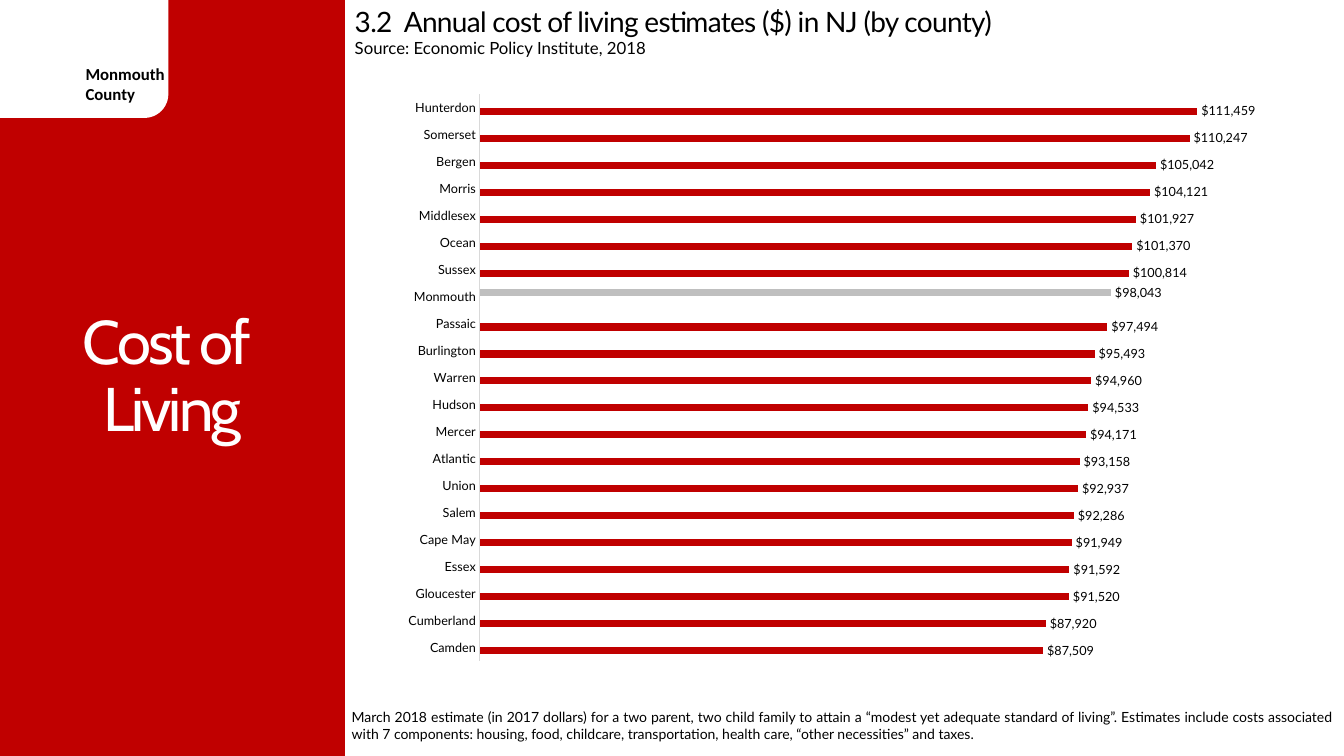
from dataclasses import dataclass

from lxml import etree
from pptx import Presentation
from pptx import util as u
from pptx.chart import data as chart_data
from pptx.dml import color
from pptx.enum import chart as charts, shapes, text


@dataclass(frozen=True)
class Theme:
    """Hold the colours, fonts and type sizes of the slide."""
    red: str = "C00000"
    grey: str = "BFBFBF"
    axis: str = "D9D9D9"
    white: str = "FFFFFF"
    black: str = "000000"
    body_font: str = "Lato"
    title_font: str = "Cabin"
    badge_font: str = "Calibri"
    title: float = 44
    heading: float = 20
    label: float = 12
    note: float = 10
    chart: float = 9


THEME = Theme()
RED_FORMAT = '"$"#,##0_);[Red]\\("$"#,##0\\)'
GREY_FORMAT = '"$"#,##0'
HIGHLIGHT = "Monmouth"
COSTS = {
    "Camden": 87509, "Cumberland": 87920, "Gloucester": 91520, "Essex": 91592,
    "Cape May": 91949, "Salem": 92286, "Union": 92937, "Atlantic": 93158,
    "Mercer": 94171, "Hudson": 94533, "Warren": 94960, "Burlington": 95493,
    "Passaic": 97494, "Monmouth": 98043, "Sussex": 100814, "Ocean": 101370,
    "Middlesex": 101927, "Morris": 104121, "Bergen": 105042,
    "Somerset": 110247, "Hunterdon": 111459,
}
NOTE = (
    "March 2018 estimate (in 2017 dollars) for a two parent, two child family to attain "
    "a “modest yet adequate standard of living”. Estimates include costs associated with "
    "7 components: housing, food, childcare, transportation, health care, "
    "“other necessities” and taxes."
)


def apply(target, **values):
    """Set each given attribute on the target."""
    for name, value in values.items():
        setattr(target, name, value)


def rgb(value):
    """Turn a hex string into a colour."""
    return color.RGBColor.from_string(value)


def inches(*values):
    """Turn numbers into lengths in inches."""
    return [u.Inches(value) for value in values]


def format_font(font, size, name=THEME.body_font, fill=THEME.black, bold=False):
    """Give a font its size, face, colour and weight."""
    apply(font, size=u.Pt(size), name=name, bold=bold)
    font.color.rgb = rgb(fill)


def write_lines(shape, lines, size, spacing=0, paragraph_format=None, frame_format=None, **font):
    """Fill a shape with one formatted paragraph per line."""
    frame = shape.text_frame
    apply(frame, word_wrap=True, auto_size=text.MSO_AUTO_SIZE.NONE, **(frame_format or {}))
    for index, line in enumerate(lines):
        paragraph = frame.add_paragraph() if index else frame.paragraphs[0]
        apply(paragraph, **(paragraph_format or {}))
        run = paragraph.add_run()
        run.text = line
        format_font(run.font, size, **font)
        if spacing:
            run.font._element.set("spc", str(int(spacing * 100)))


def add_block(slide, kind, box, fill):
    """Draw a plain filled shape in a box."""
    shape = slide.shapes.add_shape(kind, *inches(*box))
    shape.shadow.inherit = False
    shape.fill.solid()
    shape.fill.fore_color.rgb = rgb(fill)
    shape.line.fill.background()


def add_side_panel(slide, box):
    """Build the red panel with the county badge and the slide title."""
    left, top, width, height = box
    add_block(slide, shapes.MSO_SHAPE.RECTANGLE, box, THEME.red)
    add_block(slide, shapes.MSO_SHAPE.ROUNDED_RECTANGLE,
              (left - 0.33, top - 0.25, 2, 1.42), THEME.white)
    badge = slide.shapes.add_textbox(*inches(left + 0.75, top + 0.58, 1.08, 0.5))
    write_lines(badge, ["Monmouth County"], THEME.label, name=THEME.badge_font, bold=True)

    title = slide.shapes.title
    slide.shapes._spTree.append(title._element)
    title_box = inches(left, top + 0.75, width, height - 1.5)
    apply(title, **dict(zip(("left", "top", "width", "height"), title_box)))
    write_lines(title, ["Cost of ", "Living"], THEME.title, spacing=-2,
                paragraph_format={"alignment": text.PP_ALIGN.CENTER, "line_spacing": 0.9},
                frame_format={"vertical_anchor": text.MSO_ANCHOR.MIDDLE},
                name=THEME.title_font, fill=THEME.white)


def set_plot_area(chart, box):
    """Fix the inner plot area as fractions of the chart."""
    plot_area = chart._chartSpace.chart.plotArea
    namespace = plot_area.nsmap["c"]
    for old in plot_area.findall(f"{{{namespace}}}layout"):
        plot_area.remove(old)
    layout = etree.Element(f"{{{namespace}}}layout")
    manual = etree.SubElement(layout, f"{{{namespace}}}manualLayout")
    settings = {"layoutTarget": "inner", "xMode": "edge", "yMode": "edge",
                **dict(zip("xywh", box))}
    for name, value in settings.items():
        etree.SubElement(manual, f"{{{namespace}}}{name}", val=str(value))
    plot_area.insert(0, layout)


def add_cost_chart(slide, box):
    """Chart the county costs with one county highlighted."""
    data = chart_data.CategoryChartData(number_format=RED_FORMAT)
    data.categories = list(COSTS)
    data.add_series("Series 1", [None if name == HIGHLIGHT else cost
                                 for name, cost in COSTS.items()])
    data.add_series("Series 2", [cost if name == HIGHLIGHT else None
                                 for name, cost in COSTS.items()], GREY_FORMAT)
    chart = slide.shapes.add_chart(
        charts.XL_CHART_TYPE.BAR_CLUSTERED, *inches(*box), data).chart
    apply(chart, has_title=False, has_legend=False)
    format_font(chart.font, THEME.note, THEME.badge_font)
    set_plot_area(chart, (0.118, 0.026, 0.862, 0.948))
    apply(chart.value_axis, visible=False, has_major_gridlines=False,
          minimum_scale=0, maximum_scale=120000)
    axis = chart.category_axis
    apply(axis, major_tick_mark=charts.XL_TICK_MARK.NONE,
          minor_tick_mark=charts.XL_TICK_MARK.NONE)
    format_font(axis.tick_labels.font, THEME.chart)
    axis.format.line.color.rgb = rgb(THEME.axis)
    axis.format.line.width = u.Pt(0.75)

    plot = chart.plots[0]
    apply(plot, gap_width=182, overlap=0, vary_by_categories=False)
    styles = ((THEME.red, RED_FORMAT), (THEME.grey, GREY_FORMAT))
    for series, (fill, number_format) in zip(plot.series, styles):
        series.format.fill.solid()
        series.format.fill.fore_color.rgb = rgb(fill)
        labels = series.data_labels
        apply(labels, show_value=True, number_format=number_format,
              number_format_is_linked=False,
              position=charts.XL_LABEL_POSITION.OUTSIDE_END)
        format_font(labels.font, THEME.chart)


def add_content(slide, box):
    """Build the heading, source line, chart and footnote."""
    left, top, width, height = box
    heading = slide.shapes.add_textbox(*inches(left, top, width, 0.44))
    write_lines(heading, ["3.2  Annual cost of living estimates ($) in NJ (by county)"],
                THEME.heading, spacing=-0.5)
    source = slide.shapes.add_textbox(*inches(left, top + 0.33, width, 0.3))
    write_lines(source, ["Source: Economic Policy Institute, 2018"], THEME.label)
    note = slide.shapes.add_textbox(*inches(left - 0.03, top + height - 0.52, width + 0.06, 0.44))
    write_lines(note, [NOTE], THEME.note,
                paragraph_format={"alignment": text.PP_ALIGN.JUSTIFY},
                frame_format={"vertical_anchor": text.MSO_ANCHOR.MIDDLE})
    add_cost_chart(slide, (left + 0.29, top + 0.78, 8.89, 5.93))


def main():
    """Create the presentation and save it."""
    presentation = Presentation()
    apply(presentation, slide_width=u.Inches(13.33), slide_height=u.Inches(7.5))
    slide = presentation.slides.add_slide(presentation.slide_layouts[5])
    add_side_panel(slide, (0, 0, 3.42, 7.5))
    add_content(slide, (3.42, 0, 9.86, 7.5))
    presentation.save("out.pptx")


if __name__ == "__main__":
    main()
